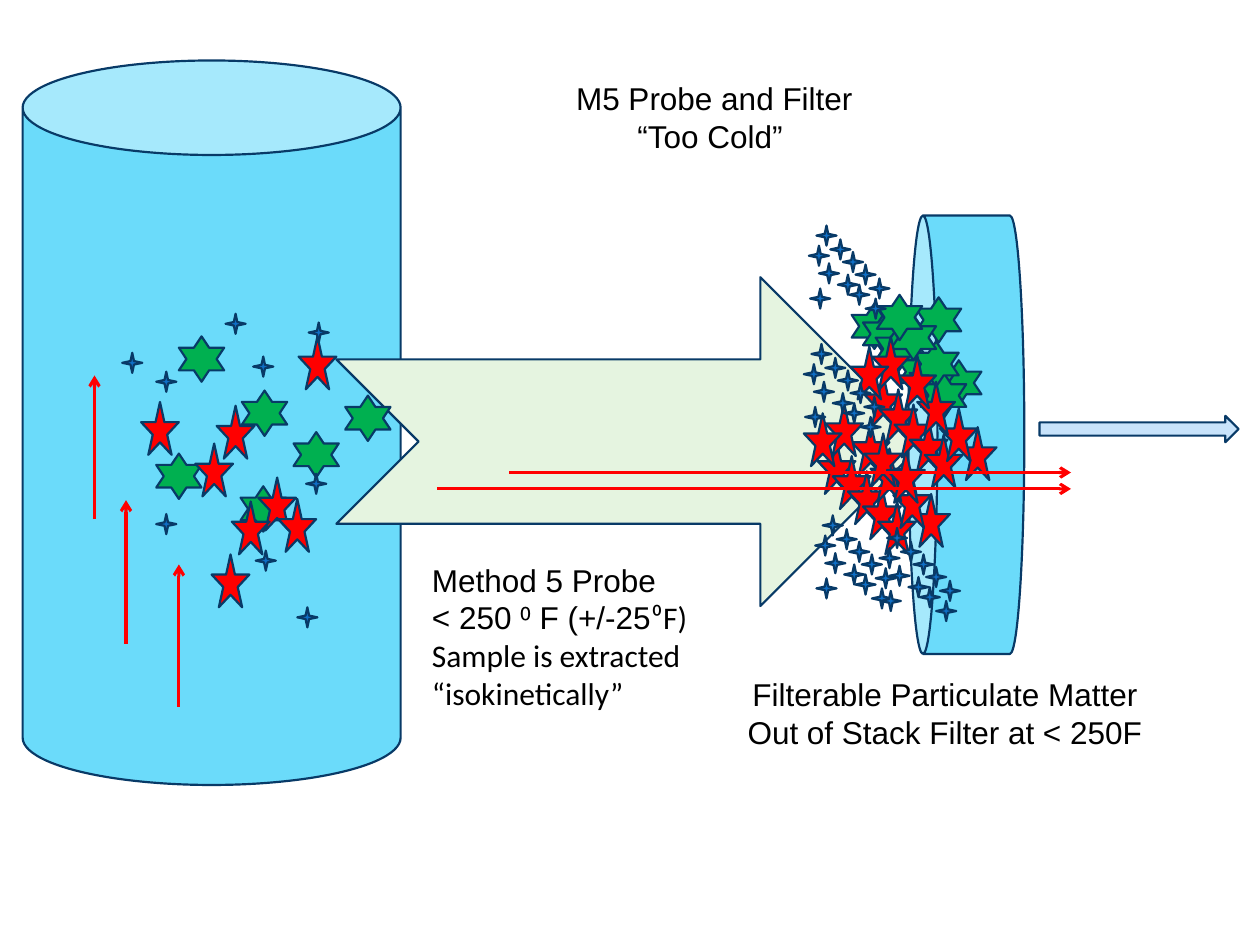
from lxml.etree import SubElement
from pptx import Presentation
from pptx.dml.color import RGBColor
from pptx.enum.shapes import MSO_CONNECTOR, MSO_SHAPE
from pptx.enum.text import MSO_ANCHOR, MSO_AUTO_SIZE, PP_ALIGN
from pptx.oxml.ns import qn
from pptx.util import Pt

PX = 9144
NAVY, CYAN, RED = "083A67", "6BDBFA", "FF0000"
VAPOR = (MSO_SHAPE.STAR_4_POINT, 16, 16, "0F6FC6")
CONDENSATE = (MSO_SHAPE.STAR_6_POINT, 36, 36, "00B050")
SOLID = (MSO_SHAPE.STAR_5_POINT, 30, 42, RED)


def draw(shapes, preset, left, top, width, height, fill):
    shape = shapes.add_shape(preset, left * PX, top * PX, width * PX, height * PX)
    shape.shadow.inherit = False
    shape.fill.solid()
    shape.fill.fore_color.rgb = RGBColor.from_string(fill)
    shape.line.color.rgb = RGBColor.from_string(NAVY)
    shape.line.width = Pt(1.25)
    return shape


def write(shape, lines, alignment):
    frame = shape.text_frame
    frame.word_wrap = False
    frame.auto_size = MSO_AUTO_SIZE.SHAPE_TO_FIT_TEXT
    frame.vertical_anchor = MSO_ANCHOR.TOP
    for index, line in enumerate(lines):
        paragraph = frame.add_paragraph() if index else frame.paragraphs[0]
        paragraph.alignment = alignment
        for words, font_name in line:
            run = paragraph.add_run()
            run.text = words
            run.font.name = font_name
            run.font.size = Pt(18)
            run.font.color.rgb = RGBColor.from_string("000000")


presentation = Presentation()
presentation.slide_width = 1000 * PX
presentation.slide_height = 750 * PX
slide = presentation.slides.add_slide(presentation.slide_layouts[5])
shapes = slide.shapes

title = shapes.title
title.left, title.top, title.width, title.height = 446 * PX, 58 * PX, 242 * PX, 71 * PX
write(title, [[("M5 Probe and Filter", "Arial")], [("“Too Cold” ", "Arial")]], PP_ALIGN.CENTER)

stack = draw(shapes, MSO_SHAPE.CAN, 18, 48, 300, 575, CYAN)
probe = draw(shapes, MSO_SHAPE.NOTCHED_RIGHT_ARROW, 267, 220, 467, 261, "E5F4E0")
filter_disc = draw(shapes, MSO_SHAPE.CAN, 593, 299, 348, 92, CYAN)
filter_disc.rotation = 270

vapor_swarm = [(1, 50), (6, 0), (17, 11), (27, 21), (37, 31), (48, 42),
               (45, 58), (32, 47), (23, 39), (8, 30), (0, 16)]
solid_swarm = [(11, 30), (23, 42), (35, 54), (47, 66), (59, 78), (86, 72),
               (71, 57), (53, 36), (38, 15), (17, 0), (0, 8)]
condensate_swarm = [(51, 2), (67, 52), (0, 7), (9, 13), (19, 25), (37, 43),
                    (46, 53), (55, 62), (49, 37), (31, 16), (20, 0)]
swarms_before_flow = [
    (VAPOR, 647, 409, vapor_swarm),
    (CONDENSATE, 676, 234, condensate_swarm),
    (SOLID, 638, 320, solid_swarm),
    (SOLID, 675, 267, [(11, 77), (29, 90)] + solid_swarm),
    (VAPOR, 642, 179, vapor_swarm),
]
swarms_after_flow = [
    (VAPOR, 638, 273, vapor_swarm),
    (VAPOR, 698, 419, vapor_swarm),
]

for (preset, width, height, fill), left, top, offsets in swarms_before_flow:
    swarm = shapes.add_group_shape()
    for dx, dy in offsets:
        draw(swarm.shapes, preset, left + dx, top + dy, width, height, fill)

captions = [
    (333, 440, 225, 131, PP_ALIGN.LEFT, [
        [("Method 5 Probe", "Arial")],
        [("< 250 ⁰ F (+/-25", "Arial"), ("⁰F)", "Calibri")],
        [("Sample is extracted", "Calibri")],
        [("“isokinetically”", "Calibri")],
    ]),
    (582, 531, 336, 71, PP_ALIGN.CENTER, [
        [("Filterable Particulate Matter", "Arial")],
        [("Out of Stack Filter at < 250F", "Arial")],
    ]),
]
for left, top, width, height, alignment, lines in captions:
    caption = shapes.add_textbox(left * PX, top * PX, width * PX, height * PX)
    write(caption, lines, alignment)

outlet = draw(shapes, MSO_SHAPE.RIGHT_ARROW, 825, 330, 158, 21, "C8E3FB")

gas_flows = [
    (404, 375, 850, 375),
    (347, 388, 850, 388),
    (75, 412, 75, 298),
    (100, 511, 100, 397),
    (142, 561, 142, 448),
]
for flow_ends in gas_flows:
    flow = shapes.add_connector(MSO_CONNECTOR.STRAIGHT, *[end * PX for end in flow_ends])
    flow.line.color.rgb = RGBColor.from_string(RED)
    flow.line.width = Pt(1.75)
    SubElement(flow.line._get_or_add_ln(), qn("a:tailEnd"), type="arrow")
    SubElement(flow._element.spPr, qn("a:effectLst"))

stack_particles = [
    (CONDENSATE, [(274, 314), (142, 267), (124, 360), (192, 310), (191, 386), (233, 343)]),
    (SOLID, [(205, 379), (168, 440), (172, 322), (237, 267),
             (112, 319), (184, 398), (155, 352), (221, 396)]),
    (VAPOR, [(236, 482), (245, 256), (179, 249), (97, 280), (243, 376),
             (124, 408), (201, 283), (203, 437), (124, 295)]),
]
for (preset, width, height, fill), places in stack_particles:
    for left, top in places:
        draw(shapes, preset, left, top, width, height, fill)

for (preset, width, height, fill), left, top, offsets in swarms_after_flow:
    swarm = shapes.add_group_shape()
    for dx, dy in offsets:
        draw(swarm.shapes, preset, left + dx, top + dy, width, height, fill)

presentation.save("out.pptx")
